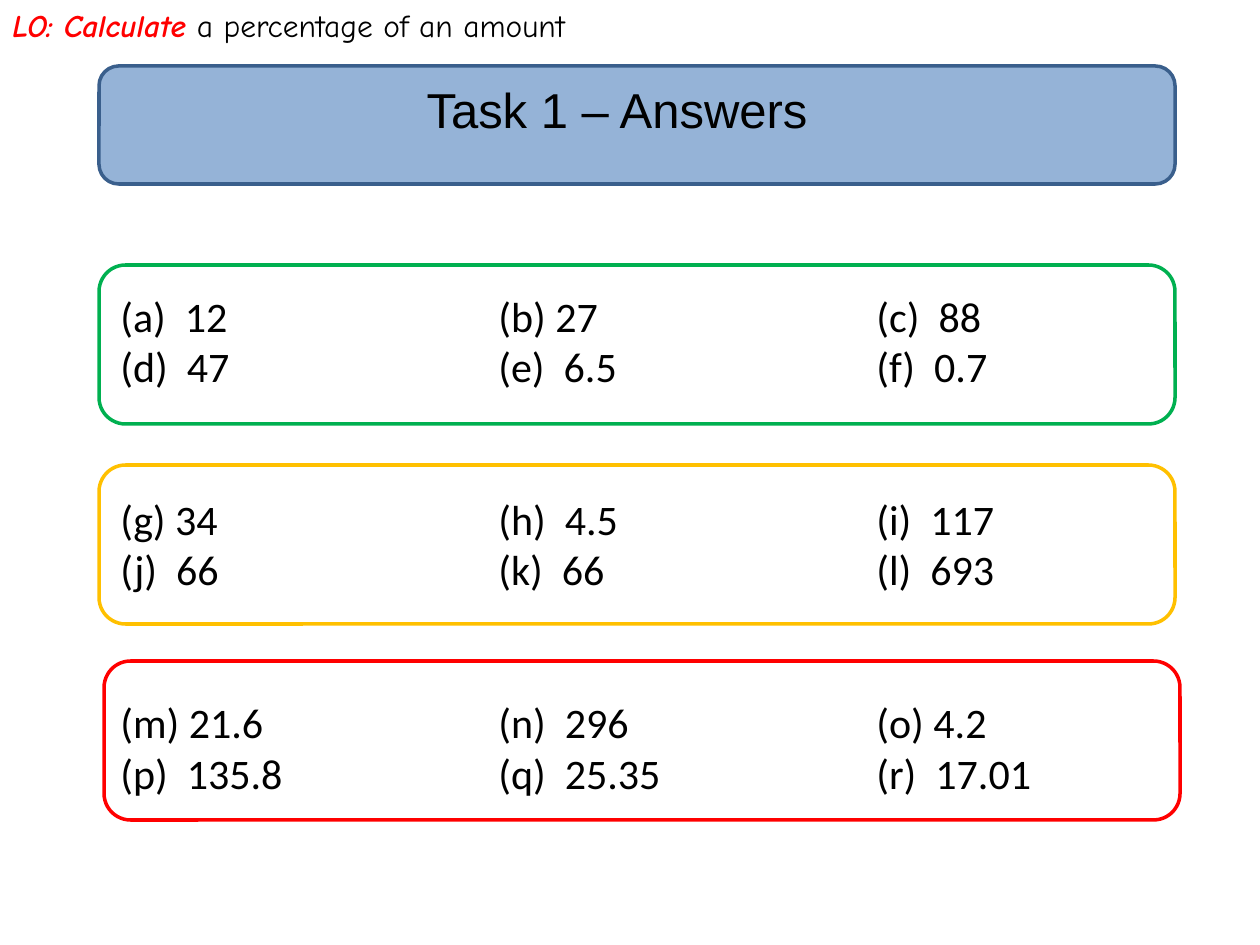
import pptx
import pptx.dml.color
import pptx.enum.shapes
import pptx.enum.text
import pptx.util
from lxml import etree

EMU_PER_PX = 914400 / 126
COLUMN_STEP = 378  # px between answer columns
TIER_GAP = 58.6  # pt, two answer lines

TIERS = [
    ("00B050", (99, 265, 1076, 159), [
        ["(a)  12", "(b) 27", "(c)  88"],
        ["(d)  47", "(e)  6.5", "(f)  0.7"],
    ]),
    ("FFC000", (99, 465, 1076, 159), [
        ["(g) 34", "(h)  4.5", "(i)  117"],
        ["(j)  66", "(k)  66", "(l)  693"],
    ]),
    ("FF0000", (104, 661, 1076, 159), [
        ["(m) 21.6", "(n)  296", "(o) 4.2"],
        ["(p)  135.8", "(q)  25.35", "(r)  17.01"],
    ]),
]
ANSWER_FONT = {"name": "Calibri", "size": pptx.util.Pt(24)}
TITLE_FONT = {"name": "Arial", "size": pptx.util.Pt(28)}
OBJECTIVE_FONT = {"name": "Comic Neue", "size": pptx.util.Pt(18)}


def px(length):
    return pptx.util.Emu(round(length * EMU_PER_PX))


def color(hex_code):
    return pptx.dml.color.RGBColor.from_string(hex_code)


def add_panel(slide, box, outline, fill=None):
    panel = slide.shapes.add_shape(
        pptx.enum.shapes.MSO_SHAPE.ROUNDED_RECTANGLE, *map(px, box))
    panel.shadow.inherit = False
    panel.line.color.rgb = color(outline)
    panel.line.width = pptx.util.Pt(2)
    if fill:
        panel.fill.solid()
        panel.fill.fore_color.rgb = color(fill)
    else:
        panel.fill.background()


def add_text_frame(slide, box):
    frame = slide.shapes.add_textbox(*map(px, box)).text_frame
    frame.word_wrap = True
    return frame


def add_run(paragraph, text, font, ink="000000"):
    run = paragraph.add_run()
    run.text = text
    for attribute, value in font.items():
        setattr(run.font, attribute, value)
    run.font.color.rgb = color(ink)


def set_column_tabs(paragraph, columns):
    """Give every column after the first a left tab stop."""
    namespace = pptx.oxml.ns.qn
    tabs = etree.SubElement(paragraph._p.get_or_add_pPr(), namespace("a:tabLst"))
    for column in range(1, columns):
        etree.SubElement(tabs, namespace("a:tab"),
                         pos=str(px(column * COLUMN_STEP)), algn="l")


def add_title(slide, box):
    left, top, width, height = box
    add_panel(slide, box, "3A5F8C", "95B3D7")
    heading = add_text_frame(
        slide, (left - 49, top + 7, width + 58, height + 40)).paragraphs[0]
    heading.alignment = pptx.enum.text.PP_ALIGN.CENTER
    add_run(heading, "Task 1 – Answers", TITLE_FONT)


def add_answers(slide, box):
    frame = add_text_frame(slide, box)
    for tier, (_, _, rows) in enumerate(TIERS):
        for row, answers in enumerate(rows):
            first = tier == row == 0
            line = frame.paragraphs[0] if first else frame.add_paragraph()
            if tier and row == 0:
                line.space_before = pptx.util.Pt(TIER_GAP)
            set_column_tabs(line, len(answers))
            add_run(line, "\t".join(answers), ANSWER_FONT)


def add_objective(slide, box):
    objective = add_text_frame(slide, box).paragraphs[0]
    add_run(objective, "LO: Calculate",
            OBJECTIVE_FONT | {"bold": True, "italic": True}, "FF0000")
    add_run(objective, " a percentage of an amount", OBJECTIVE_FONT)


def main():
    presentation = pptx.Presentation()
    presentation.slide_width = px(1260)
    presentation.slide_height = px(945)
    slide = presentation.slides.add_slide(presentation.slide_layouts[6])
    for outline, box, _ in reversed(TIERS):
        add_panel(slide, box, outline)
    add_title(slide, (99, 66, 1076, 118))
    add_answers(slide, (108, 284, 1076, 522))
    add_objective(slide, (0, 0, 1017, 131))
    presentation.save("out.pptx")


if __name__ == "__main__":
    main()
